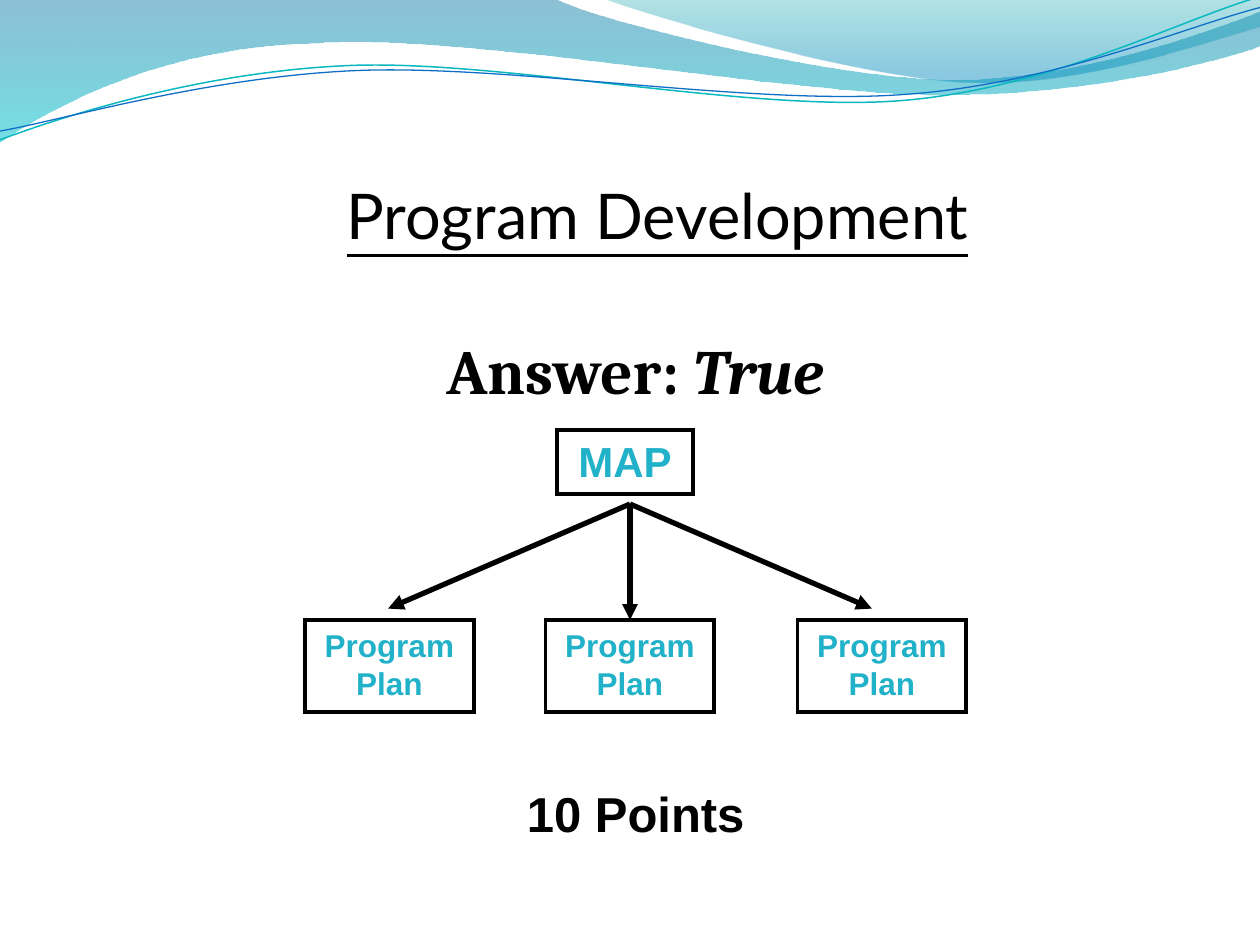
"""Build the Program Development answer slide with its map of program plans."""
from math import cos, radians, sin
from lxml.etree import SubElement
from pptx import Presentation
from pptx.dml.color import RGBColor
from pptx.enum.shapes import MSO_CONNECTOR as CONNECTOR, MSO_SHAPE as SHAPE
from pptx.enum.text import MSO_ANCHOR as ANCHOR, PP_ALIGN as ALIGN
from pptx.oxml.ns import qn
from pptx.util import Inches, Pt

rgb = RGBColor.from_string


def draw_outline(shapes, start, segments, close):
    """Draw a freeform; one-point segments are lines, three-point ones are cubic curves."""
    builder = shapes.build_freeform(Inches(start[0]), Inches(start[1]))
    corners = [(Inches(x), Inches(y)) for segment in segments for x, y in segment]
    builder.add_line_segments(corners, close=close)
    outline = builder.convert_to_shape()
    outline.shadow.inherit = False
    moves = iter(list(outline._element.iter(qn("a:lnTo"))))
    for segment in segments:
        move = next(moves)
        if len(segment) == 3:
            move.tag = qn("a:cubicBezTo")
            for _ in range(2):
                extra = next(moves)
                move.append(extra[0])
                extra.getparent().remove(extra)
    return outline


def write(shape, text, size, color, font="Arial"):
    """Fill a shape with centred bold text."""
    frame = shape.text_frame
    frame.word_wrap = True
    frame.vertical_anchor = ANCHOR.TOP
    paragraph = frame.paragraphs[0]
    paragraph.text = text
    paragraph.alignment = ALIGN.CENTER
    run = paragraph.runs[0]
    run.font.name = font
    run.font.size = Pt(size)
    run.font.bold = True
    run.font.color.rgb = rgb(color)


prs = Presentation()
prs.slide_width, prs.slide_height = Inches(10), Inches(7.5)
slide = prs.slides.add_slide(prs.slide_layouts[5])
shapes = slide.shapes

waves = [
    ((0, 0),
     [[(4.4, -0.01)],
      [(4.76, 0.17), (6.64, 0.63), (7.58, 0.63)],
      [(8.53, 0.63), (9.58, 0.26), (10, 0.09)],
      [(10.01, 0.36)],
      [(9.83, 0.44), (8.7, 0.76), (7.46, 0.75)],
      [(6.22, 0.75), (3.82, 0.28), (2.57, 0.34)],
      [(1.29, 0.36), (0.46, 0.83), (-0.01, 1.13)],
      [(0, 0)]],
     [(0, "0074A1", 45), (1, "00C6CF", 55)]),
    ((4.79, -0.01),
     [[(5.09, 0.11), (6.82, 0.62), (7.69, 0.65)],
      [(8.56, 0.69), (9.61, 0.32), (10, 0.21)],
      [(10, 0)],
      [(4.79, -0.01)]],
     [(0, "00A1A9", 30), (0.8, "008BBF", 45)]),
]
for start, segments, stops in waves:
    wave = draw_outline(shapes, start, segments, True)
    wave.line.fill.background()
    wave.fill.gradient()
    wave.fill.gradient_angle = 270
    for stop, (position, color, _) in zip(wave.fill.gradient_stops, stops):
        stop.position = position
        stop.color.rgb = rgb(color)
    gradient = wave._element.spPr.find(qn("a:gradFill"))
    for tint, (_, _, opacity) in zip(gradient.iter(qn("a:srgbClr")), stops):
        SubElement(tint, qn("a:alpha"), val=str(opacity * 1000))

strands = [
    ([(0, 1.11), (0.48, 0.93), (1.58, 0.57), (2.77, 0.52), (3.95, 0.47),
      (5.93, 0.89), (7.13, 0.8), (8.33, 0.71), (9.38, 0.15), (9.98, -0.02)],
     (4.99, 0.575), "0AB8BF", 0.85),
    ([(0, 1.04), (0.47, 0.96), (1.64, 0.61), (2.83, 0.56), (4.03, 0.51),
      (5.97, 0.84), (7.17, 0.75), (8.36, 0.67), (9.41, 0.21), (10, 0.06)],
     (4.995, 0.59), "0F6FC6", 0.75),
]
tilt = radians(2.7)
for track, (mid_x, mid_y), color, width in strands:
    level = [(mid_x + (x - mid_x) * cos(tilt) - (y - mid_y) * sin(tilt),
              mid_y + (x - mid_x) * sin(tilt) + (y - mid_y) * cos(tilt))
             for x, y in track]
    curves = [level[k:k + 3] for k in range(1, len(level), 3)]
    strand = draw_outline(shapes, level[0], curves, False)
    strand.rotation = 357.3
    strand.fill.background()
    strand.line.color.rgb = rgb(color)
    strand.line.width = Pt(width)

title = shapes.title
shapes._spTree.append(title._element)
title.left, title.top = Inches(2.75), Inches(0.75)
title.width, title.height = Inches(7.25), Inches(1.25)
heading = title.text_frame
heading.text = "Program Development"
heading.vertical_anchor = ANCHOR.BOTTOM
heading.margin_left = heading.margin_right = heading.margin_bottom = 0
heading.paragraphs[0].alignment = ALIGN.LEFT
heading_font = heading.paragraphs[0].runs[0].font
heading_font.name = "Lato"
heading_font.size = Pt(36)
heading_font.underline = True
heading_font.color.rgb = rgb("000000")

answer = shapes.add_textbox(Inches(0.75), Inches(2.58), Inches(8.58), Inches(1.83))
write(answer, "Answer: ", 36, "000000", "Cambria")
verdict = answer.text_frame.paragraphs[0].add_run()
verdict.text = "True"
verdict.font.name = "Cambria"
verdict.font.size = Pt(36)
verdict.font.bold = verdict.font.italic = True
verdict.font.color.rgb = rgb("000000")

score = shapes.add_textbox(Inches(3.42), Inches(6.17), Inches(3.25), Inches(0.57))
write(score, "10 Points", 28, "000000")

boxes = [("MAP", 24, 4.42, 3.41, 1.08, 0.51)]
boxes += [("Program Plan", 18, left, 4.92, 1.34, 0.73) for left in (2.42, 4.33, 6.33)]
nodes = []
for label, size, *place in boxes:
    node = shapes.add_shape(SHAPE.RECTANGLE, *map(Inches, place))
    node.shadow.inherit = False
    node.fill.background()
    node.line.color.rgb = rgb("000000")
    node.line.width = Pt(2.25)
    SubElement(node.line._get_or_add_ln(), qn("a:miter"), lim="800000")
    write(node, label, size, "21B2C9")
    nodes.append(node)
middle_plan = nodes[2]

for tip_x, tip_y in [(3.08, 4.83), (5, 4.92), (6.92, 4.83)]:
    arrow = shapes.add_connector(
        CONNECTOR.STRAIGHT, Inches(5), Inches(4), Inches(tip_x), Inches(tip_y))
    if tip_x == 5:
        arrow.end_connect(middle_plan, 0)
    arrow.line.color.rgb = rgb("000000")
    arrow.line.width = Pt(3)
    SubElement(arrow.line._get_or_add_ln(), qn("a:tailEnd"), type="triangle")
    SubElement(arrow._element.spPr, qn("a:effectLst"))

prs.save("out.pptx")
